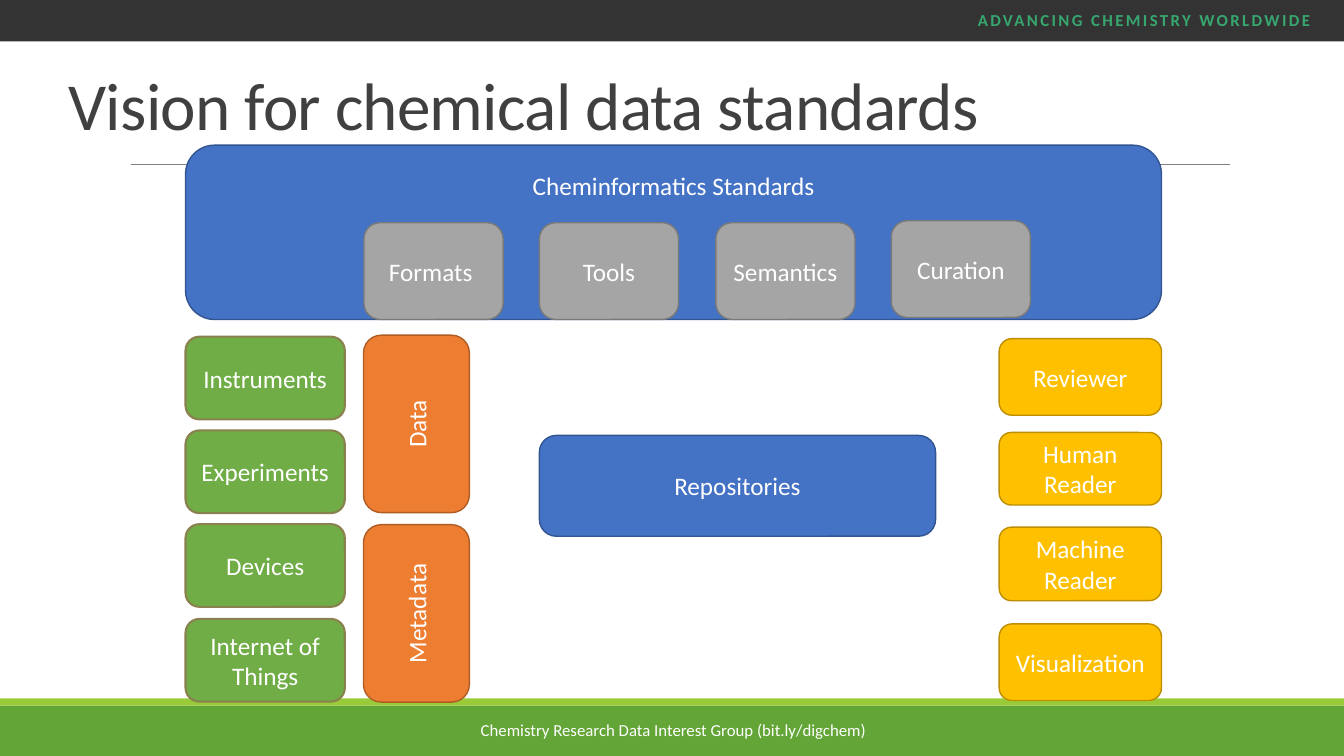
"""Build the slide on the vision for chemical data standards."""
from dataclasses import dataclass

from lxml.etree import SubElement
from pptx import Presentation
from pptx.dml.color import RGBColor
from pptx.enum.shapes import MSO_CONNECTOR as Connector, MSO_SHAPE as Preset
from pptx.enum.text import MSO_ANCHOR as Anchor, MSO_AUTO_SIZE as AutoSize, PP_ALIGN as Align
from pptx.oxml.ns import qn
from pptx.shapes.autoshape import Shape
from pptx.slide import Slide
from pptx.text.text import TextFrame
from pptx.util import Emu, Pt

EMU_PER_PX = 9144
FONT = "Calibri"
COLOURS = {
    "black": "000000", "white": "FFFFFF", "title": "404040", "rule": "808080",
    "motto": "37A76F", "footer": "63A537", "stripe": "99CB38",
    "blue": "4472C4", "blue_edge": "325491",
    "green": "70AD47", "green_edge": "89814E",
    "orange": "ED7D31", "orange_edge": "AF5C24",
    "grey": "A5A5A5", "grey_edge": "7A7A7A",
    "gold": "FFC000", "gold_edge": "BD8E00",
}


@dataclass(frozen=True)
class Band:
    top: int
    height: int
    colour: str
    opacity: int = 100


@dataclass(frozen=True)
class Block:
    text: str
    left: int
    top: int
    width: int
    height: int
    colour: str
    edge_pt: float = 1
    rotation: int = 0
    heading_inset: int = 0


@dataclass(frozen=True)
class Lettering:
    size: float
    colour: str
    align: Align = Align.CENTER
    bold: bool = False
    spacing: int = 0


BANDS = [
    Band(700, 50, "footer"),
    Band(693, 7, "stripe"),
    Band(0, 41, "black", opacity=80),
]
SOURCES = ["Instruments", "Experiments", "Devices", "Internet of Things"]
TOPICS = [("Formats ", 221), ("Tools", 221), ("Semantics", 221), ("Curation", 219)]
USERS = [("Reviewer", 336, 76), ("Human Reader", 429, 72),
         ("Machine Reader", 523, 73), ("Visualization", 619, 76)]
CONTENTS = [("Data", 368), ("Metadata", 556)]
BLOCKS = [
    Block("Cheminformatics Standards", 184, 144, 968, 173, "blue", heading_inset=17),
    *(Block(source, 184, 334 + 280 * row // 3, 158, 82, "green", edge_pt=1.5)
      for row, source in enumerate(SOURCES)),
    *(Block(content, 325, top, 176, 105, "orange", rotation=270)
      for content, top in CONTENTS),
    Block("Repositories", 535, 432, 393, 100, "blue"),
    *(Block(user, 991, top, 161, height, "gold") for user, top, height in USERS),
    *(Block(topic, 361 + 349 * column // 2, top, 138, 96, "grey")
      for column, (topic, top) in enumerate(TOPICS)),
]


def px(length: int) -> Emu:
    """Turn px into EMU."""
    return Emu(length * EMU_PER_PX)


def rgb(name: str) -> RGBColor:
    """Look up a named colour."""
    return RGBColor.from_string(COLOURS[name])


def set_insets(frame: TextFrame, inset: int, bottom: int) -> None:
    """Set equal insets with a separate bottom one."""
    frame.margin_left = frame.margin_top = frame.margin_right = px(inset)
    frame.margin_bottom = px(bottom)


def write(frame: TextFrame, text: str, style: Lettering) -> None:
    """Write one formatted run into a wrapping frame."""
    frame.word_wrap = True
    paragraph = frame.paragraphs[0]
    paragraph.alignment = style.align
    run = paragraph.add_run()
    run.text = text
    run.font.name = FONT
    run.font.size = Pt(style.size)
    run.font.bold = style.bold
    run.font.color.rgb = rgb(style.colour)
    if style.spacing:
        run.font._element.set("spc", str(style.spacing))


def draw_band(slide: Slide, band: Band) -> None:
    """Draw a full-width band."""
    strip = slide.shapes.add_shape(
        Preset.RECTANGLE, 0, px(band.top), px(1333), px(band.height))
    strip.shadow.inherit = False
    strip.fill.solid()
    strip.fill.fore_color.rgb = rgb(band.colour)
    strip.line.fill.background()
    if band.opacity < 100:
        tint = strip.fill._xPr.find(qn("a:solidFill"))[0]
        SubElement(tint, qn("a:alpha")).set("val", str(band.opacity * 1000))


def draw_rule(slide: Slide) -> None:
    """Draw the thin line below the title."""
    rule = slide.shapes.add_connector(
        Connector.STRAIGHT, px(130), px(163), px(1220), px(163))
    rule.line.color.rgb = rgb("rule")
    rule.line.width = Pt(0.5)
    SubElement(rule._element.spPr, qn("a:effectLst"))


def draw_block(slide: Slide, block: Block) -> Shape:
    """Draw a rounded block with its label."""
    box = slide.shapes.add_shape(
        Preset.ROUNDED_RECTANGLE, px(block.left), px(block.top),
        px(block.width), px(block.height))
    box.shadow.inherit = False
    box.rotation = block.rotation
    box.fill.solid()
    box.fill.fore_color.rgb = rgb(block.colour)
    box.line.color.rgb = rgb(f"{block.colour}_edge")
    box.line.width = Pt(block.edge_pt)
    frame = box.text_frame
    frame.vertical_anchor = Anchor.MIDDLE
    if block.heading_inset:
        frame.vertical_anchor = Anchor.TOP
        frame.margin_top = px(block.heading_inset)
    write(frame, block.text, Lettering(18, "white"))
    return box


def write_title(slide: Slide) -> None:
    """Place and fill the title."""
    title = slide.shapes.title
    title.left, title.top, title.width, title.height = map(px, (68, 75, 1200, 183))
    frame = title.text_frame
    frame.auto_size = AutoSize.NONE
    frame.vertical_anchor = Anchor.TOP
    set_insets(frame, 0, 5)
    write(frame, "Vision for chemical data standards",
          Lettering(48, "title", Align.LEFT, spacing=-50))
    frame.paragraphs[0].line_spacing = 0.85


def write_margins(slide: Slide) -> None:
    """Write the motto at the top and the group name at the bottom."""
    motto = slide.shapes.add_textbox(px(710), px(10), px(590), px(20)).text_frame
    set_insets(motto, 0, 0)
    write(motto, "ADVANCING CHEMISTRY WORLDWIDE",
          Lettering(12, "motto", Align.RIGHT, bold=True, spacing=170))
    group = slide.shapes.add_textbox(px(445), px(704), px(450), px(40)).text_frame
    group.vertical_anchor = Anchor.MIDDLE
    write(group, "Chemistry Research Data Interest Group (bit.ly/digchem) ",
          Lettering(12, "white"))


def main() -> None:
    """Build and save the slide."""
    deck = Presentation()
    deck.slide_width, deck.slide_height = px(1333), px(750)
    slide = deck.slides.add_slide(deck.slide_layouts[5])
    for band in BANDS:
        draw_band(slide, band)
    draw_rule(slide)
    write_margins(slide)
    write_title(slide)
    for block in BLOCKS:
        draw_block(slide, block)
    deck.save("out.pptx")


if __name__ == "__main__":
    main()
